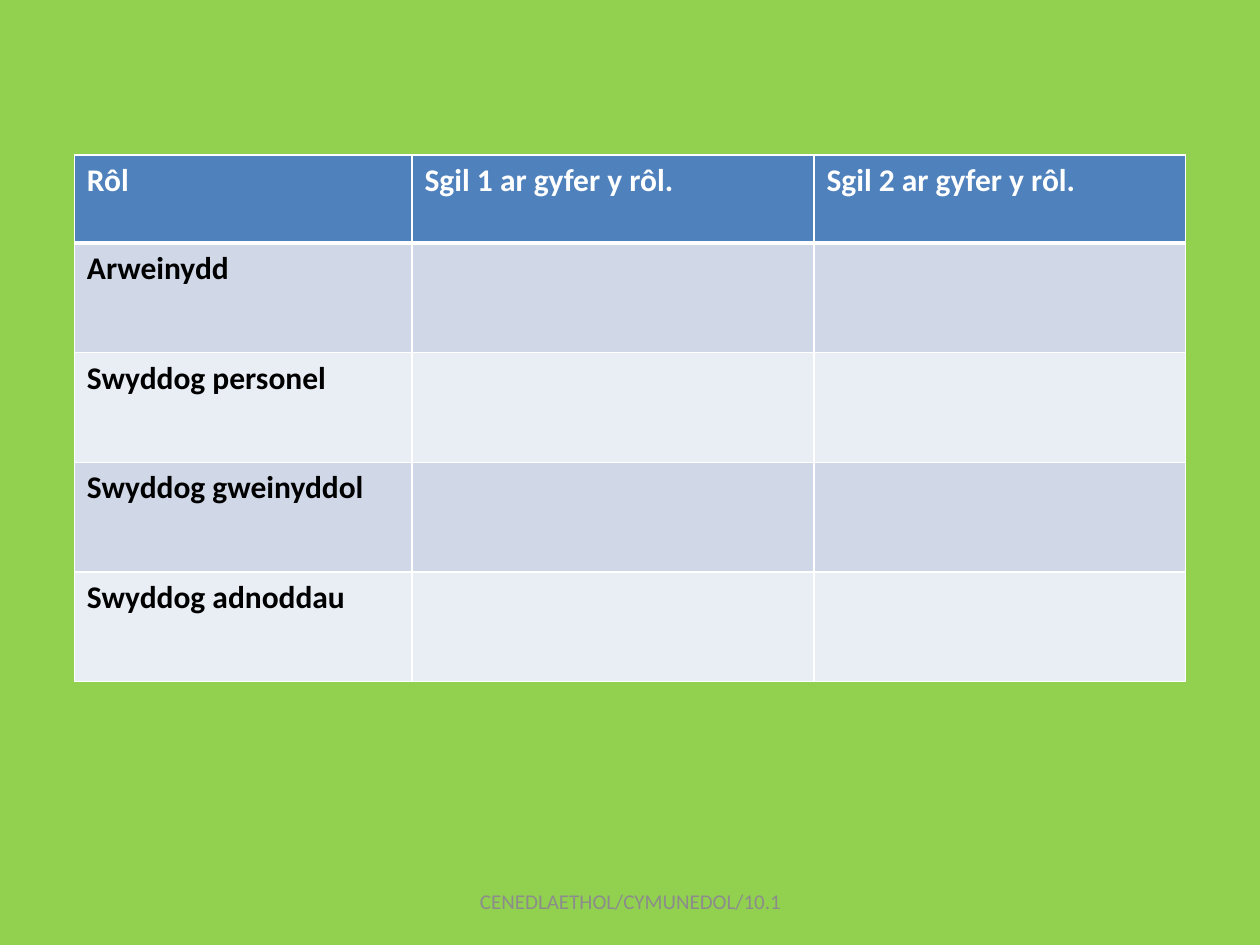
from pptx import Presentation
from pptx.dml.color import RGBColor
from pptx.enum.text import MSO_ANCHOR, PP_ALIGN
from pptx.oxml import parse_xml
from pptx.oxml.ns import nsdecls
from pptx.util import Inches, Pt

CENTER = PP_ALIGN.CENTER
LEFT = PP_ALIGN.LEFT
MIDDLE = MSO_ANCHOR.MIDDLE

GREEN = RGBColor(0x92, 0xD0, 0x50)
BLUE = RGBColor(0x4F, 0x81, 0xBD)
DARK_BAND = RGBColor(0xD0, 0xD8, 0xE8)
LIGHT_BAND = RGBColor(0xE9, 0xED, 0xF4)
WHITE = RGBColor(0xFF, 0xFF, 0xFF)
BLACK = RGBColor(0x00, 0x00, 0x00)
GRAY = RGBColor(0x8C, 0x8C, 0x8C)

ROWS = [
    ["Rôl", "Sgil 1 ar gyfer y rôl.", "Sgil 2 ar gyfer y rôl."],
    ["Arweinydd", "", ""],
    ["Swyddog personel", "", ""],
    ["Swyddog gweinyddol", "", ""],
    ["Swyddog adnoddau", "", ""],
]
COLUMN_WIDTHS = [2.68, 3.19, 2.95]
HEADER_HEIGHT = 0.7
ROW_HEIGHT = 0.87


def write_text(text_frame, text, size=18, color=BLACK, bold=False, align=LEFT):
    paragraph = text_frame.paragraphs[0]
    paragraph.alignment = align
    run = paragraph.add_run()
    run.text = text
    run.font.name = "Calibri"
    run.font.size = Pt(size)
    run.font.bold = bold
    run.font.color.rgb = color


def set_borders(cell, **widths):
    properties = cell._tc.get_or_add_tcPr()
    for side, width in widths.items():
        properties.append(parse_xml(
            f'<a:ln{side} {nsdecls("a")} w="{Pt(width)}"><a:solidFill>'
            f'<a:srgbClr val="{WHITE}"/></a:solidFill></a:ln{side}>'))


presentation = Presentation()
presentation.slide_width = Inches(10)
presentation.slide_height = Inches(7.5)
slide = presentation.slides.add_slide(presentation.slide_layouts[6])
slide.background.fill.solid()
slide.background.fill.fore_color.rgb = GREEN

table_height = HEADER_HEIGHT + ROW_HEIGHT * (len(ROWS) - 1)
table = slide.shapes.add_table(
    len(ROWS), len(COLUMN_WIDTHS), Inches(0.59), Inches(1.23),
    Inches(sum(COLUMN_WIDTHS)), Inches(table_height)).table

for column, width in zip(table.columns, COLUMN_WIDTHS):
    column.width = Inches(width)

for row_index, texts in enumerate(ROWS):
    is_header = row_index == 0
    table.rows[row_index].height = Inches(HEADER_HEIGHT if is_header else ROW_HEIGHT)
    band = DARK_BAND if row_index % 2 else LIGHT_BAND
    for column_index, text in enumerate(texts):
        cell = table.cell(row_index, column_index)
        set_borders(cell, L=1, R=1, T=3 if row_index == 1 else 1, B=3 if is_header else 1)
        cell.fill.solid()
        cell.fill.fore_color.rgb = BLUE if is_header else band
        if text:
            write_text(cell.text_frame, text, color=WHITE if is_header else BLACK, bold=True)

footer = slide.shapes.add_textbox(Inches(3.42), Inches(6.95), Inches(3.17), Inches(0.4))
footer.text_frame.word_wrap = True
footer.text_frame.vertical_anchor = MIDDLE
write_text(footer.text_frame, "CENEDLAETHOL/CYMUNEDOL/10.1", size=12, color=GRAY, align=CENTER)

presentation.save("out.pptx")
